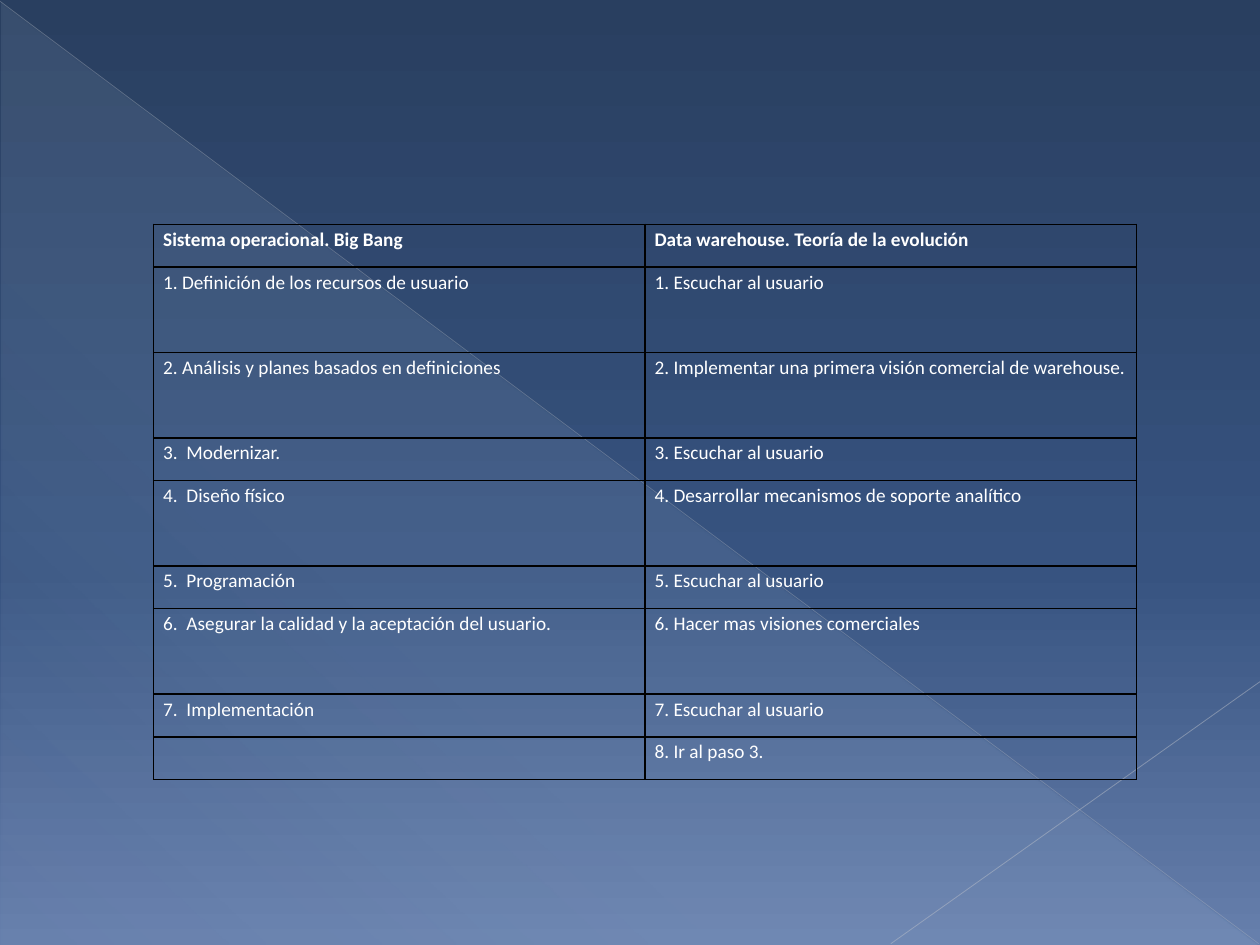
"""Build a slide comparing operational system and data warehouse steps in a table."""
from dataclasses import dataclass

import lxml.etree
import pptx
import pptx.dml.color
import pptx.enum.shapes
import pptx.enum.text
import pptx.oxml
import pptx.oxml.ns
import pptx.util

Pt = pptx.util.Pt
RGBColor = pptx.dml.color.RGBColor
qn = pptx.oxml.ns.qn

WHITE = RGBColor(0xFF, 0xFF, 0xFF)
BLACK = RGBColor(0x00, 0x00, 0x00)
NAVY = RGBColor(0x29, 0x3F, 0x60)
BLUE = RGBColor(0x37, 0x53, 0x80)
STEEL = RGBColor(0x66, 0x7F, 0xAC)
ICE = RGBColor(0xD6, 0xEC, 0xFF)
GRAY = RGBColor(0xB7, 0xBC, 0xC5)
SILVER = RGBColor(0xBF, 0xC3, 0xCB)

ROW_HEIGHT = 24.42
COLUMN_WIDTH = 280.8
INDENT = 27


@dataclass
class Stop:
    position: int
    color: RGBColor
    opacity: int = 100


@dataclass
class Ray:
    start: tuple[float, float]
    end: tuple[float, float]
    color: RGBColor
    width: float
    opacity: int


@dataclass
class Step:
    operational: str
    warehouse: str
    units: int = 1


BACKGROUND = [Stop(0, NAVY), Stop(60, BLUE), Stop(100, STEEL)]
GLOW = [Stop(0, ICE, 10), Stop(70, ICE, 8), Stop(100, ICE, 1)]
RAYS = [
    Ray((0, 0.72), (719.28, 539.28), GRAY, 0.39, 35),
    Ray((720, 389.52), (509.04, 539.28), SILVER, 0.47, 45),
]
STEPS = [
    Step("Sistema operacional. Big Bang", "Data warehouse. Teoría de la evolución"),
    Step("1. Definición de los recursos de usuario", "1. Escuchar al usuario", 2),
    Step("2. Análisis y planes basados en definiciones",
         "2. Implementar una primera visión comercial de warehouse.", 2),
    Step("3.  Modernizar.", "3. Escuchar al usuario"),
    Step("4.  Diseño físico", "4. Desarrollar mecanismos de soporte analítico", 2),
    Step("5.  Programación", "5. Escuchar al usuario"),
    Step("6.  Asegurar la calidad y la aceptación del usuario.",
         "6. Hacer mas visiones comerciales", 2),
    Step("7.  Implementación", "7. Escuchar al usuario"),
    Step("", "8. Ir al paso 3."),
]


def add_color(parent, color: RGBColor, opacity: int = 100) -> None:
    clr = lxml.etree.SubElement(parent, qn("a:srgbClr"), val=str(color))
    if opacity < 100:
        lxml.etree.SubElement(clr, qn("a:alpha"), val=str(opacity * 1000))


def set_gradient(fill, element, stops: list[Stop], angle: float) -> None:
    fill.gradient()
    fill.gradient_angle = 360 - angle
    stop_list = element.find(".//" + qn("a:gsLst"))
    for old in list(stop_list):
        stop_list.remove(old)
    for stop in stops:
        gs = lxml.etree.SubElement(stop_list, qn("a:gs"), pos=str(stop.position * 1000))
        add_color(gs, stop.color, stop.opacity)


def add_ray(s, ray: Ray) -> None:
    line = s.shapes.add_connector(
        pptx.enum.shapes.MSO_CONNECTOR.STRAIGHT, *map(Pt, ray.start + ray.end))
    line.line.width = Pt(ray.width)
    line.line.color.rgb = ray.color
    clr = line.element.spPr.find(".//" + qn("a:srgbClr"))
    lxml.etree.SubElement(clr, qn("a:alpha"), val=str(ray.opacity * 1000))
    lxml.etree.SubElement(line.element.spPr, qn("a:effectLst"))


def set_borders(cell) -> None:
    tc_pr = cell._tc.get_or_add_tcPr()
    for index, side in enumerate(("a:lnL", "a:lnR", "a:lnT", "a:lnB")):
        ln = pptx.oxml.parse_xml(f'<{side} {pptx.oxml.ns.nsdecls("a")} w="{Pt(1)}"/>')
        add_color(lxml.etree.SubElement(ln, qn("a:solidFill")), BLACK)
        tc_pr.insert(index, ln)


def fill_cell(cell, text: str, header: bool) -> None:
    cell.fill.background()
    set_borders(cell)
    cell.margin_left = cell.margin_right = Pt(5.4)
    cell.margin_top = cell.margin_bottom = 0
    if not text:
        return
    p = cell.text_frame.paragraphs[0]
    p.text = text
    p.alignment = pptx.enum.text.PP_ALIGN.JUSTIFY
    p.line_spacing = 1.15
    p.font.name = "Calibri"
    p.font.size = Pt(11)
    p.font.bold = header
    p.font.color.rgb = WHITE
    if not header:
        p_pr = p._p.get_or_add_pPr()
        p_pr.set("marL", str(Pt(INDENT)))
        p_pr.set("indent", str(-Pt(INDENT)))


def add_steps(s, steps: list[Step]) -> None:
    height = ROW_HEIGHT * sum(step.units for step in steps)
    table = s.shapes.add_table(
        len(steps), 2, Pt(87.84), Pt(128.16), Pt(2 * COLUMN_WIDTH), Pt(height)).table
    table.horz_banding = False
    for column in table.columns:
        column.width = Pt(COLUMN_WIDTH)
    for i, step in enumerate(steps):
        table.rows[i].height = Pt(ROW_HEIGHT * step.units)
        for j, text in enumerate((step.operational, step.warehouse)):
            fill_cell(table.cell(i, j), text, i == 0)


def main() -> None:
    prs = pptx.Presentation()
    prs.slide_width, prs.slide_height = Pt(720), Pt(540)
    s = prs.slides.add_slide(prs.slide_layouts[6])
    set_gradient(s.background.fill, s.element, BACKGROUND, 90)
    sp = s.shapes.add_shape(pptx.enum.shapes.MSO_SHAPE.RIGHT_TRIANGLE,
                            Pt(0.72), Pt(1.44), Pt(718.56), Pt(538.56))
    sp.shadow.inherit = False
    sp.line.fill.background()
    set_gradient(sp.fill, sp.element, GLOW, 133)
    for ray in RAYS:
        add_ray(s, ray)
    add_steps(s, STEPS)
    prs.save("out.pptx")


if __name__ == "__main__":
    main()
